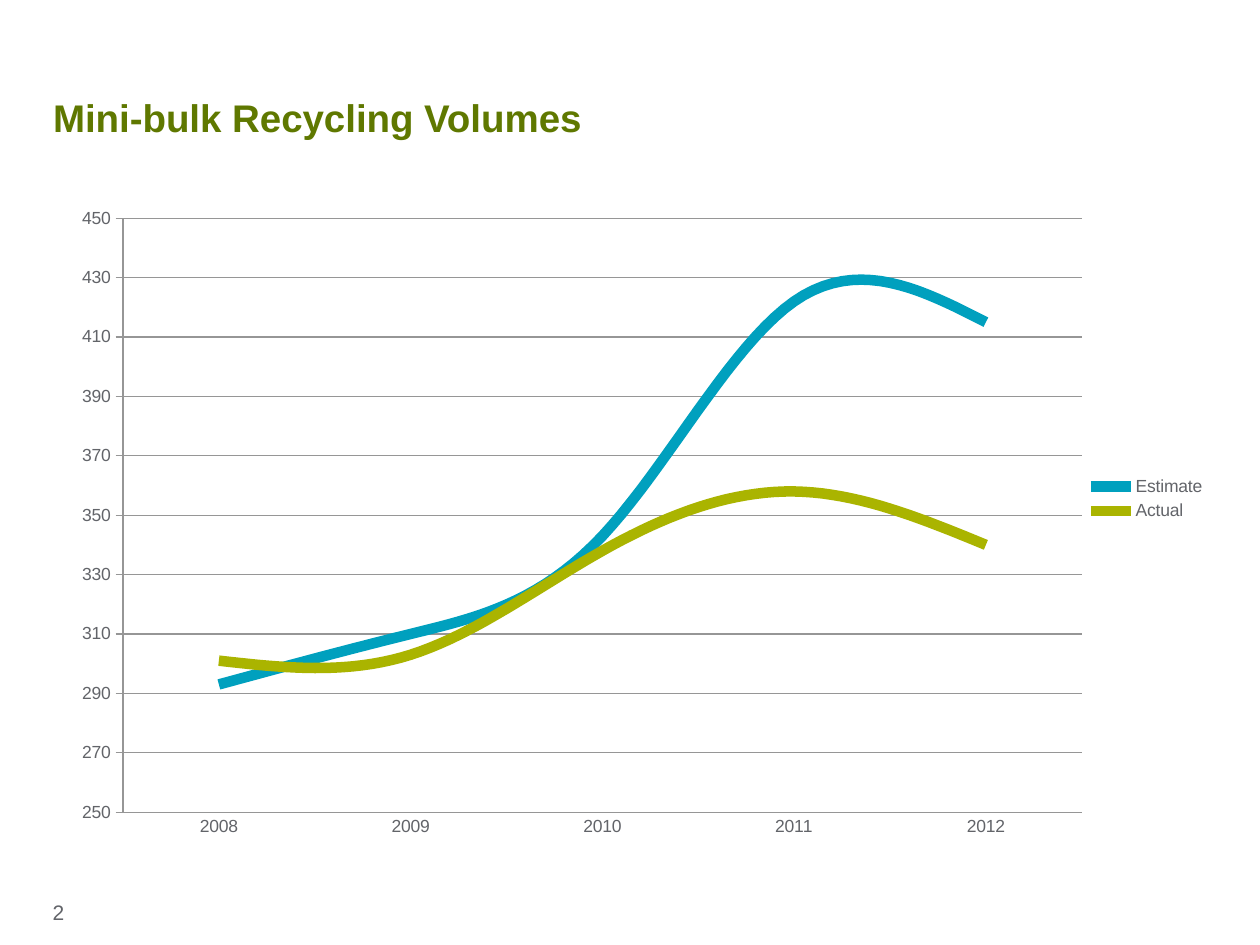
from lxml.etree import SubElement
from pptx import Presentation
from pptx.chart.data import CategoryChartData
from pptx.dml.color import RGBColor
from pptx.enum.chart import XL_CHART_TYPE, XL_LEGEND_POSITION, XL_TICK_MARK
from pptx.enum.text import MSO_ANCHOR
from pptx.oxml.ns import qn
from pptx.util import Cm, Pt

GRAY = "626469"
RULE = "969696"
YEARS = ["2008", "2009", "2010", "2011", "2012"]
SERIES = [
    ("Estimate", [293, 310, 343, 422, 415], "00A0BE"),
    ("Actual", [301, 303, 338, 358, 340], "AAB400"),
]
PLOT = {"x": 0.101, "y": 0.101, "w": 0.787, "h": 0.845}


def paint(item, color):
    item.rgb = RGBColor.from_string(color)


def style(font, size, color, bold=False):
    font.name = "Arial"
    font.size = Pt(size)
    font.bold = bold
    paint(font.color, color)


def stroke(line, color, width):
    paint(line.color, color)
    line.width = Pt(width)


def add_text(slide, box, text, size, color, bold=False):
    frame = slide.shapes.add_textbox(*map(Cm, box)).text_frame
    frame.word_wrap = True
    para = frame.paragraphs[0]
    para.text = text
    style(para.font, size, color, bold)
    return frame


def add_title(slide, text):
    frame = add_text(slide, (1.07, 0.84, 22.86, 3.18), text, 22, "5F7800", True)
    frame.vertical_anchor = MSO_ANCHOR.MIDDLE
    frame.margin_left = frame.margin_right = 0
    frame.margin_top = frame.margin_bottom = 0
    frame.paragraphs[0].line_spacing = 0.9


def place_plot(chart):
    area = chart.element.find(".//" + qn("c:plotArea"))
    layout = area.find(qn("c:layout"))
    if layout is None:
        layout = SubElement(area, qn("c:layout"))
        area.insert(0, layout)
    manual = SubElement(layout, qn("c:manualLayout"))
    parts = {"layoutTarget": "inner", "xMode": "edge", "yMode": "edge", **PLOT}
    for name, value in parts.items():
        SubElement(manual, qn("c:" + name)).set("val", str(value))


def style_axes(chart):
    years, scale = chart.category_axis, chart.value_axis
    years.major_tick_mark = XL_TICK_MARK.NONE
    scale.major_tick_mark = XL_TICK_MARK.OUTSIDE
    scale.minimum_scale = 250
    scale.maximum_scale = 450
    scale.major_unit = 20
    scale.has_major_gridlines = True
    for part in (years, scale, scale.major_gridlines):
        stroke(part.format.line, RULE, 0.75)


def add_lines(slide):
    data = CategoryChartData()
    data.categories = YEARS
    for name, values, _ in SERIES:
        data.add_series(name, values)
    box = map(Cm, (0, 2.97, 24.56, 14.17))
    chart = slide.shapes.add_chart(XL_CHART_TYPE.LINE, *box, data).chart
    style(chart.font, 10, GRAY)
    chart.has_title = False
    chart.has_legend = True
    chart.legend.position = XL_LEGEND_POSITION.RIGHT
    chart.legend.include_in_layout = False
    chart.plots[0].vary_by_categories = False
    for line, (_, _, color) in zip(chart.plots[0].series, SERIES):
        line.smooth = True
        stroke(line.format.line, color, 6)
    style_axes(chart)
    place_plot(chart)


def main():
    deck = Presentation()
    deck.slide_width, deck.slide_height = Cm(25.4), Cm(19.05)
    slide = deck.slides.add_slide(deck.slide_layouts[6])
    add_text(slide, (0.81, 18.01, 1.55, 1.04), "2", 12, GRAY)
    add_title(slide, "Mini-bulk Recycling Volumes")
    add_lines(slide)
    deck.save("out.pptx")


if __name__ == "__main__":
    main()
